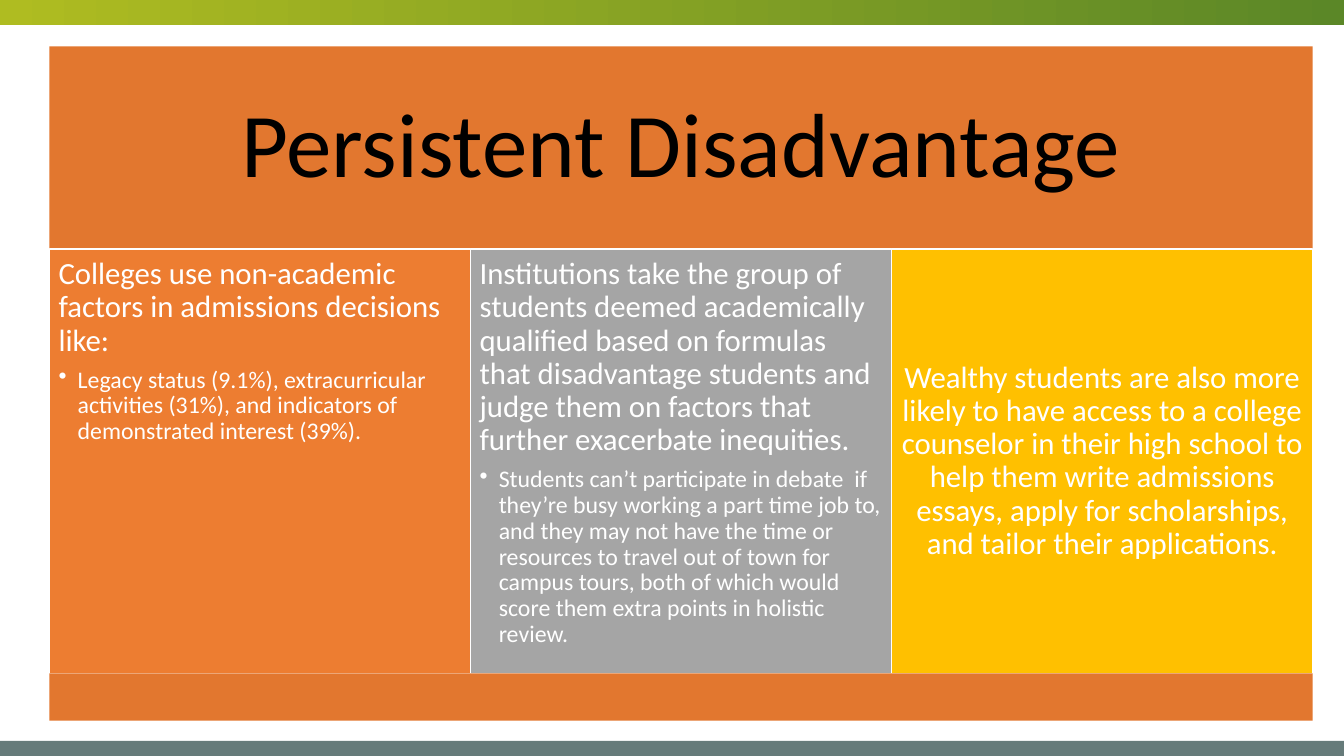
from pptx import Presentation
from pptx.dml.color import RGBColor
from pptx.enum import shapes, text
from pptx.oxml import parse_xml
from pptx.oxml.ns import nsdecls
from pptx.util import Inches, Pt

# Content
TITLE = "Persistent Disadvantage"
COLUMNS = [
    {
        "color": "ED7D31",
        "lead": "Colleges use non-academic factors in admissions decisions like:",
        "bullet": "Legacy status (9.1%), extracurricular activities (31%), and "
                  "indicators of demonstrated interest (39%).",
    },
    {
        "color": "A5A5A5",
        "lead": "Institutions take the group of students deemed academically "
                "qualified based on formulas that disadvantage students and judge "
                "them on factors that further exacerbate inequities.",
        "bullet": "Students can’t participate in debate  if they’re busy working a "
                  "part time job to, and they may not have the time or resources to "
                  "travel out of town for campus tours, both of which would score "
                  "them extra points in holistic review.",
    },
    {
        "color": "FFC000",
        "lead": "Wealthy students are also more likely to have access to a college "
                "counselor in their high school to help them write admissions "
                "essays, apply for scholarships, and tailor their applications.",
        "bullet": None,
    },
]

THEME = {
    "font": "Calibri",
    "title_size": 65, "lead_size": 22, "bullet_size": 17,
    "title_color": "000000", "body_color": "FFFFFF", "border": "FFFFFF",
    "panel": "E2772F", "footer": "667B7A",
    "header_gradient": ("AFBC21", "5B8727"),
}

# Layout in inches
SLIDE_WIDTH, SLIDE_HEIGHT = 13.33, 7.5
LEFT, WIDTH = 0.49, 12.53
TITLE_TOP, TITLE_HEIGHT = 0.46, 2.01
COLUMN_TOP, COLUMN_HEIGHT = TITLE_TOP + TITLE_HEIGHT, 4.21
BASE_TOP, BASE_HEIGHT = COLUMN_TOP + COLUMN_HEIGHT, 0.47
COLUMN_WIDTH = WIDTH / len(COLUMNS)


def add_panel(slide, left, top, width, height, color=None, border=None):
    shape = slide.shapes.add_shape(
        shapes.MSO_SHAPE.RECTANGLE,
        Inches(left), Inches(top), Inches(width), Inches(height))
    shape.shadow.inherit = False
    if color:
        shape.fill.solid()
        shape.fill.fore_color.rgb = RGBColor.from_string(color)
    if border:
        shape.line.color.rgb = RGBColor.from_string(border)
        shape.line.width = Pt(1)
    else:
        shape.line.fill.background()
    return shape


def prepare_frame(shape, inset, anchor):
    frame = shape.text_frame
    frame.word_wrap = True
    frame.vertical_anchor = anchor
    frame.margin_left = frame.margin_right = Inches(inset)
    frame.margin_top = frame.margin_bottom = Inches(inset)
    return frame


def write(paragraph, wording, size, color, alignment, space_after):
    paragraph.text = wording
    paragraph.alignment = alignment
    paragraph.line_spacing = 0.9
    paragraph.space_after = Pt(space_after)
    paragraph.font.name = THEME["font"]
    paragraph.font.size = Pt(size)
    paragraph.font.color.rgb = RGBColor.from_string(color)


def add_bullet(paragraph):
    paragraph.level = 1
    properties = paragraph._p.get_or_add_pPr()
    properties.set("marL", str(Inches(0.19)))
    properties.set("indent", str(Inches(-0.19)))
    mark = parse_xml(f'<a:buChar {nsdecls("a")} char="•"/>')
    properties.insert_element_before(mark, "a:tabLst", "a:defRPr", "a:extLst")


def add_column(slide, index, column):
    shape = add_panel(slide, LEFT + index * COLUMN_WIDTH, COLUMN_TOP,
                      COLUMN_WIDTH, COLUMN_HEIGHT, column["color"], THEME["border"])
    if column["bullet"]:
        anchor, alignment = text.MSO_ANCHOR.TOP, text.PP_ALIGN.LEFT
    else:
        anchor, alignment = text.MSO_ANCHOR.MIDDLE, text.PP_ALIGN.CENTER
    frame = prepare_frame(shape, 0.09, anchor)
    write(frame.paragraphs[0], column["lead"], THEME["lead_size"],
          THEME["body_color"], alignment, 7)
    if column["bullet"]:
        paragraph = frame.add_paragraph()
        write(paragraph, column["bullet"], THEME["bullet_size"],
              THEME["body_color"], alignment, 2.5)
        add_bullet(paragraph)


def main():
    presentation = Presentation()
    presentation.slide_width = Inches(SLIDE_WIDTH)
    presentation.slide_height = Inches(SLIDE_HEIGHT)
    slide = presentation.slides.add_slide(presentation.slide_layouts[6])

    # Edge bands
    header = add_panel(slide, 0, -0.01, SLIDE_WIDTH, 0.26)
    header.fill.gradient()
    header.fill.gradient_angle = 0
    for stop, position, color in zip(header.fill.gradient_stops, (0, 1),
                                     THEME["header_gradient"]):
        stop.position = position
        stop.color.rgb = RGBColor.from_string(color)
    add_panel(slide, 0, 7.35, SLIDE_WIDTH, 0.16, THEME["footer"])

    # Title panel
    title = add_panel(slide, LEFT, TITLE_TOP, WIDTH, TITLE_HEIGHT, THEME["panel"])
    frame = prepare_frame(title, 0.27, text.MSO_ANCHOR.MIDDLE)
    write(frame.paragraphs[0], TITLE, THEME["title_size"], THEME["title_color"],
          text.PP_ALIGN.CENTER, 0)

    # Three columns and the base strip
    for index, column in enumerate(COLUMNS):
        add_column(slide, index, column)
    add_panel(slide, LEFT, BASE_TOP, WIDTH, BASE_HEIGHT, THEME["panel"])

    presentation.save("out.pptx")


if __name__ == "__main__":
    main()
